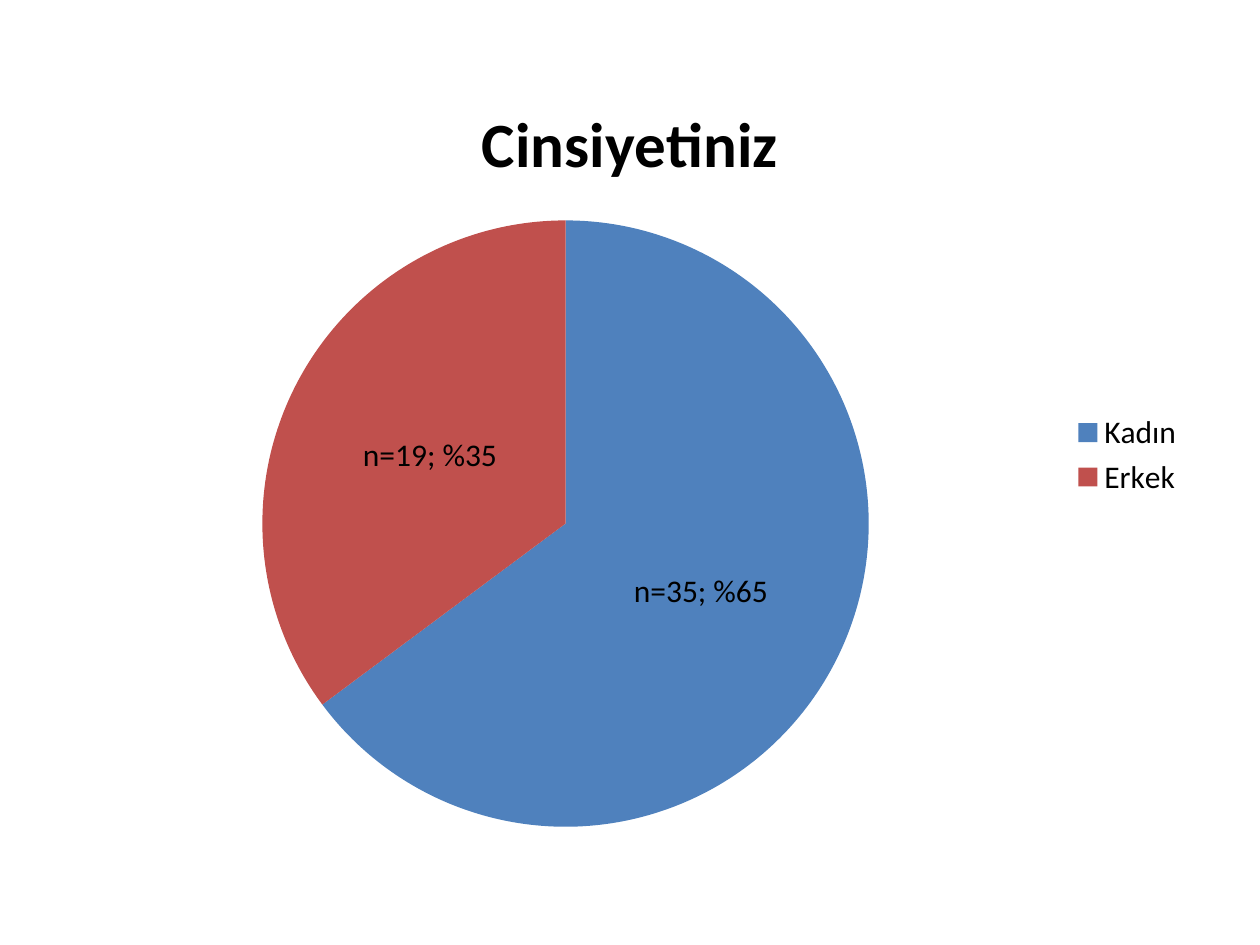
from dataclasses import dataclass

from pptx import Presentation
from pptx.chart.data import CategoryChartData
from pptx.dml.color import RGBColor
from pptx.enum.chart import XL_CHART_TYPE, XL_LABEL_POSITION, XL_LEGEND_POSITION
from pptx.util import Inches, Pt

PIE = XL_CHART_TYPE.PIE
CENTER = XL_LABEL_POSITION.CENTER
RIGHT = XL_LEGEND_POSITION.RIGHT

FONT = "Calibri"
TITLE = "Cinsiyetiniz"
COLORS = {"text": "000000", "women": "4F81BD", "men": "C0504D"}


@dataclass
class Slice:
    category: str
    count: int
    label: str
    color: str


SLICES = [
    Slice("Kadın", 35, "n=35; %65", "women"),
    Slice("Erkek", 19, "n=19; %35", "men"),
]


def style_font(font, size: int, bold: bool = False) -> None:
    font.name = FONT
    font.size = Pt(size)
    font.bold = bold
    font.color.rgb = RGBColor.from_string(COLORS["text"])


def add_text(text_frame, text: str, size: int, bold: bool = False) -> None:
    run = text_frame.paragraphs[0].add_run()
    run.text = text
    style_font(run.font, size, bold)


def format_slice(point, pie_slice: Slice) -> None:
    point.format.fill.solid()
    point.format.fill.fore_color.rgb = RGBColor.from_string(COLORS[pie_slice.color])
    add_text(point.data_label.text_frame, pie_slice.label, 18)
    point.data_label.position = CENTER


def add_gender_chart(slide) -> None:
    chart_data = CategoryChartData()
    chart_data.categories = [pie_slice.category for pie_slice in SLICES]
    chart_data.add_series(TITLE, [pie_slice.count for pie_slice in SLICES])
    chart = slide.shapes.add_chart(
        PIE, Inches(0.5), Inches(0.52), Inches(9), Inches(6.18), chart_data
    ).chart
    style_font(chart.font, 18)

    # Title and legend
    chart.has_title = True
    add_text(chart.chart_title.text_frame, TITLE, 36, bold=True)
    chart.chart_title.include_in_layout = False
    chart.has_legend = True
    chart.legend.position = RIGHT
    chart.legend.include_in_layout = False
    style_font(chart.legend.font, 18)

    # Slices and their labels
    plot = chart.plots[0]
    plot.vary_by_categories = True
    series = plot.series[0]
    labels = series.data_labels
    labels.show_value = True
    labels.show_percentage = True
    labels.position = CENTER
    style_font(labels.font, 18)
    for index, pie_slice in enumerate(SLICES):
        format_slice(series.points[index], pie_slice)


def main() -> None:
    presentation = Presentation()
    presentation.slide_width = Inches(10)
    presentation.slide_height = Inches(7.5)
    slide = presentation.slides.add_slide(presentation.slide_layouts[6])
    add_gender_chart(slide)
    presentation.save("out.pptx")


if __name__ == "__main__":
    main()
